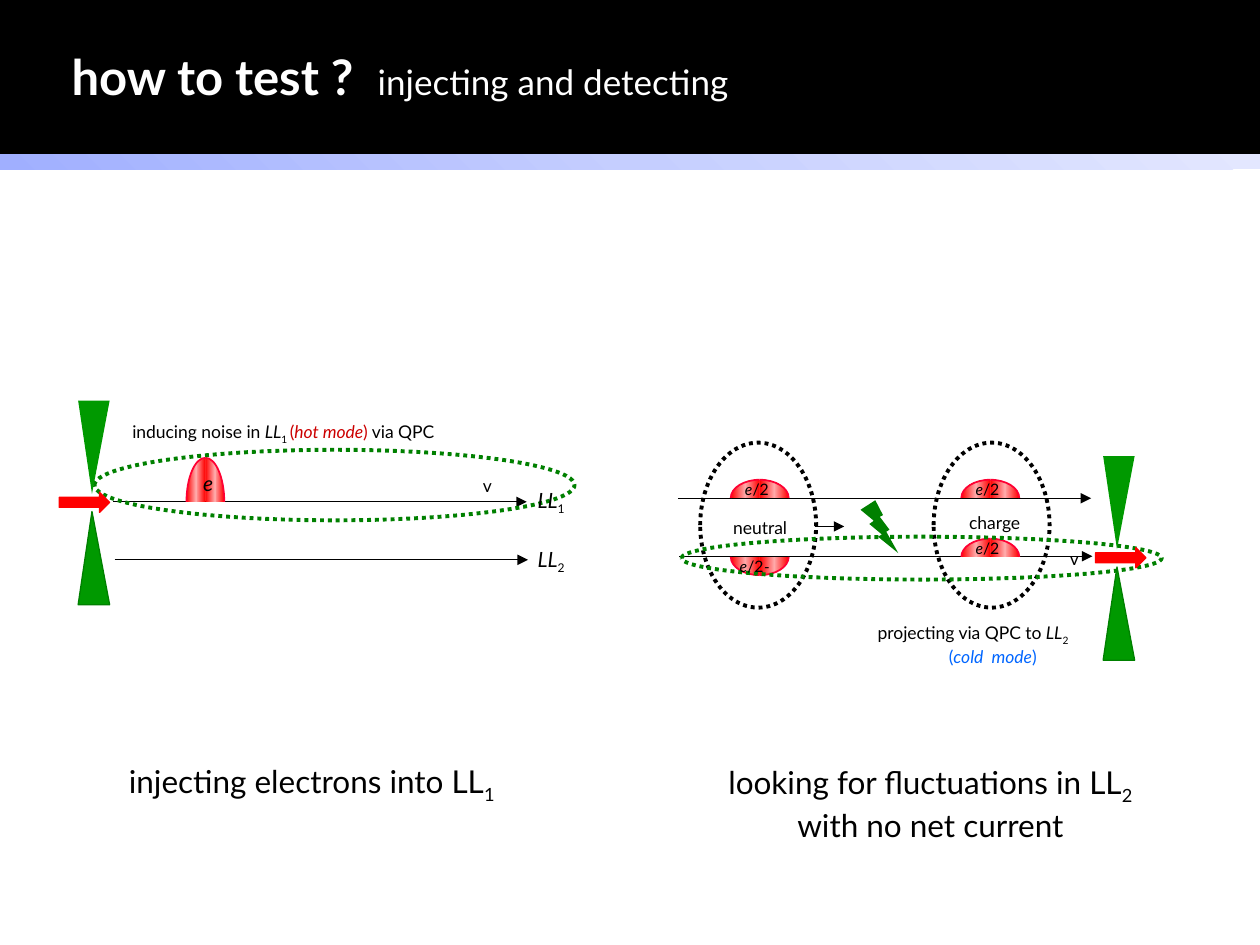
from copy import deepcopy
from dataclasses import dataclass
from typing import NamedTuple

from lxml.etree import SubElement
from pptx import Presentation
from pptx.dml.color import RGBColor
from pptx.enum.dml import MSO_LINE
from pptx.enum.shapes import MSO_CONNECTOR, MSO_SHAPE as Kind
from pptx.enum.text import MSO_ANCHOR, MSO_AUTO_SIZE as Fit, PP_ALIGN as Align
from pptx.oxml.ns import qn
from pptx.util import Inches, Pt

deck = Presentation()
deck.slide_width, deck.slide_height = Inches(10), Inches(7.5)
slide = deck.slides.add_slide(deck.slide_layouts[6])
shapes = slide.shapes
COL, ROW = deck.slide_width / 100, deck.slide_height / 75


class Box(NamedTuple):
    x: float
    y: float
    w: float
    h: float


class Run(NamedTuple):
    text: str
    ital: bool = False
    sub: bool = False
    ink: str = "000000"
    size: float = 0
    bold: bool = False
    gap: int = 0


@dataclass
class Label:
    box: Box
    size: float
    lines: list[list[Run]]
    align: Align = Align.LEFT
    wrap: bool = False
    rtl: bool = False
    dent: float = 0


class Wire(NamedTuple):
    x: float
    y: float
    end: float


class Ring(NamedTuple):
    box: Box
    ink: str
    text: str = ""


def rgb(ink: str) -> RGBColor:
    """Turn a hex string into a colour."""
    return RGBColor.from_string(ink)


def place(box: Box) -> list[int]:
    """Turn grid cells into slide lengths."""
    return [round(n * u) for n, u in zip(box, (COL, ROW, COL, ROW))]


def paint(shape, fill: str = "", line: str = "", width: float = 0.75) -> None:
    """Set the fill and line of a shape; an empty colour means none."""
    shape.shadow.inherit = False
    if fill:
        shape.fill.solid()
        shape.fill.fore_color.rgb = rgb(fill)
    else:
        shape.fill.background()
    if line:
        shape.line.color.rgb = rgb(line)
        shape.line.width = Pt(width)
    else:
        shape.line.fill.background()


def blend(shape, inks: list[str], focus: bool = False) -> None:
    """Fill a shape with evenly spaced colours, sideways or from a corner."""
    shape.fill.gradient()
    grad = shape.element.spPr.find(qn("a:gradFill"))
    for child in list(grad):
        grad.remove(child)
    stops = SubElement(grad, qn("a:gsLst"))
    for i, ink in enumerate(inks):
        stop = SubElement(stops, qn("a:gs"), pos=str(100000 * i // (len(inks) - 1)))
        SubElement(stop, qn("a:srgbClr"), val=ink)
    if focus:
        ring = SubElement(grad, qn("a:path"), path="circle")
        SubElement(ring, qn("a:fillToRect"), t="100000", r="100000")
    else:
        SubElement(grad, qn("a:lin"), ang="0", scaled="1")


def solid(kind: Kind, box: Box, fill: str = "", line: str = "", width: float = 0.75):
    """Add a preset shape."""
    shape = shapes.add_shape(kind, *place(box))
    paint(shape, fill, line, width)
    return shape


def outline(points: list[tuple[float, float]]):
    """Add a closed outline through grid points."""
    spots = [(round(x * COL), round(y * ROW)) for x, y in points]
    pen = shapes.build_freeform(*spots[0])
    pen.add_line_segments(spots[1:])
    return pen.convert_to_shape()


def write(para, runs: list[Run], size: float, align: Align, rtl: bool) -> None:
    """Fill one paragraph run by run."""
    para.alignment = align
    if rtl:
        para._p.get_or_add_pPr().set("rtl", "1")
    for item in runs:
        run = para.add_run()
        run.text = item.text
        font = run.font
        font.name, font.size = "Lato", Pt(item.size or size)
        font.italic, font.bold = item.ital, item.bold
        font.color.rgb = rgb(item.ink)
        props = run._r.get_or_add_rPr()
        if item.sub:
            props.set("baseline", "-25000")
        if item.gap:
            props.set("spc", str(item.gap))


def note(label: Label) -> None:
    """Add a text box."""
    frame = shapes.add_textbox(*place(label.box)).text_frame
    frame.word_wrap, frame.auto_size = label.wrap, Fit.SHAPE_TO_FIT_TEXT
    for i, runs in enumerate(label.lines):
        para = frame.add_paragraph() if i else frame.paragraphs[0]
        if i and label.dent:
            para._p.get_or_add_pPr().set("marL", str(round(label.dent * COL)))
        write(para, runs, label.size, label.align, label.rtl)


def wire(item: Wire) -> None:
    """Draw a level line with an arrowhead."""
    x, y, end, _ = place(Box(item.x, item.y, item.end, 0))
    line = shapes.add_connector(MSO_CONNECTOR.STRAIGHT, x, y, end, y)
    line.line.color.rgb, line.line.width = rgb("000000"), Pt(0.75)
    SubElement(line.line._get_or_add_ln(), qn("a:tailEnd"), type="triangle")
    SubElement(line.element.spPr, qn("a:effectLst"))


def curve(shape) -> None:
    """Bend the first side into a quarter ellipse and stroke that side alone."""
    body = next(shape.element.iter(qn("a:path")))
    start, side, *rest = list(body)
    (x, y), (u, v) = [(int(p[0].get("x")), int(p[0].get("y"))) for p in (start, side)]
    side.tag
    bend = SubElement(body, qn("a:cubicBezTo"))
    for a, b in ((x, y + 0.55 * (v - y)), (x + 0.45 * (u - x), v), (u, v)):
        SubElement(bend, qn("a:pt"), x=str(round(a)), y=str(round(b)))
    body.replace(side, bend)
    arc = deepcopy(body)
    for child in list(arc)[2:]:
        arc.remove(child)
    arc.set("fill", "none")
    body.set("stroke", "0")
    body.addprevious(arc)


def hump(box: Box) -> None:
    """Draw two quarter ellipses on a base; a negative height hangs them."""
    hub, crown = box.x + box.w / 2, box.y - box.h
    for foot in (box.x, box.x + box.w):
        part = outline([(foot, box.y), (hub, crown), (hub, box.y)])
        paint(part, line="FF0033", width=1)
        blend(part, ["FF0000", "FFA9A9", "FF0000"])
        curve(part)


def gate(x: float, y: float) -> None:
    """Draw two wedges whose tips face each other across a level."""
    for side, line in ((1, "008000"), (-1, "")):
        tip, base = y + 0.7 * side, y + 8.1 * side
        paint(outline([(x + 1.1, tip), (x, base), (x + 2.5, base)]), "009900", line)


def ring(item: Ring) -> None:
    """Draw a dotted ellipse, with a letter at its right if there is one."""
    shape = solid(Kind.OVAL, item.box, line=item.ink, width=2.25)
    shape.line.dash_style = MSO_LINE.ROUND_DOT
    if item.text:
        frame = shape.text_frame
        frame.word_wrap, frame.vertical_anchor = False, MSO_ANCHOR.MIDDLE
        write(frame.paragraphs[0], [Run(item.text)], 10, Align.RIGHT, True)


def tag(x: float, y: float, w: float, h: float, size: float, *runs: Run, wrap: bool = False) -> Label:
    """Describe a short right-to-left label."""
    return Label(Box(x, y, w, h), size, [list(runs)], Align.RIGHT, wrap, True)


RED, BLUE, WHITE = "CC0000", "0066FF", "FFFFFF"
LL, ONE, TWO = Run("LL", True), Run("1", sub=True), Run("2", sub=True)
HALF = Run("/2")
LEFT, RIGHT, HIGH, LOW = 58, 76.3, 39.53, 44.2

WIRES = [Wire(9, 39.83, 41.8), Wire(9.1, 44.43, 41.9), Wire(53.8, 39.55, 86.6),
         Wire(53.9, 44.15, 86.7), Wire(64.7, 41.78, 67)]
HUMPS = [Box(14.8, 39.83, 3, 3.5), Box(RIGHT, HIGH, 4.6, 1.45), Box(RIGHT, LOW, 4.6, 1.45),
         Box(LEFT, HIGH, 4.6, 1.45), Box(LEFT, LOW, 4.6, -1.45)]
RINGS = [Ring(Box(55.57, 35.13, 9.2, 13.1), "000000"), Ring(Box(74.1, 35.13, 9.2, 13.1), "000000"),
         Ring(Box(7.5, 35.7, 38.1, 5.6), "008000", "v"), Ring(Box(54.1, 42.6, 38.1, 3.4), "008000", "v")]
LABELS = [
    Label(Box(4.7, 3.2, 58.8, 5.7), 20, [[
        Run("how to test ?", ink=WHITE, size=28, bold=True),
        Run(" ", ink=WHITE, size=28, bold=True, gap=710),
        Run("injecting and detecting", ink=WHITE)]]),
    tag(41.5, 38.2, 4.3, 3, 12, LL, ONE),
    tag(41.5, 42.9, 4.3, 3, 12, LL, TWO),
    tag(15, 36.85, 2.9, 3, 12, Run("e", True)),
    Label(Box(9.52, 32.95, 27.3, 2.7), 10, [[
        Run("inducing noise in "), LL, Run("1 ", sub=True), Run("(", ink=RED),
        Run("hot mode", True, ink=RED), Run(")", ink=RED), Run(" via QPC")]]),
    *(tag(x - 0.4, y, 4.4, 2.5, 9, Run(sign, True), HALF, wrap=True)
      for x, y, sign in ((RIGHT, 37.6, "e"), (RIGHT, 42.3, "e"), (LEFT, 37.6, "e"), (LEFT, 43.7, "-e"))),
    tag(57.05, 40.55, 6.4, 2.7, 10, Run("neutral")),
    tag(75.75, 40.15, 6.2, 2.7, 10, Run("charge")),
    Label(Box(68.67, 48.9, 18.9, 4.3), 10, [
        [Run("projecting via QPC to "), LL, TWO],
        [Run("(", ink=BLUE), Run("cold", True, ink=BLUE), Run(" ", True, ink=BLUE, gap=240),
         Run("mode", True, ink=BLUE), Run(")", ink=BLUE)]], wrap=True, dent=5.65),
    Label(Box(8.75, 60, 32, 4.1), 18, [[Run("injecting electrons into LL"), ONE]], Align.CENTER),
    Label(Box(56.65, 60.05, 34.4, 7.1), 18, [
        [Run("looking for fluctuations in LL"), TWO], [Run("with no net current")]], Align.CENTER),
]

solid(Kind.RECTANGLE, Box(0, 0, 100, 12.2), "000000", "000000")
blend(solid(Kind.RECTANGLE, Box(0, 12.23, 100, 1.2)), ["A0AFFF", "C5CEFF", "E3E7FF"], True)
for item in WIRES:
    wire(item)
solid(Kind.LIGHTNING_BOLT, Box(68.3, 39.7, 3, 4.2), "008000")
for draw, items in ((hump, HUMPS), (ring, RINGS), (note, LABELS)):
    for item in items:
        draw(item)
for x, y in ((6.2, 39.9), (87.55, 44.3)):
    gate(x, y)
    solid(Kind.RIGHT_ARROW, Box(x - 1.5 if x < 50 else x - 0.6, y - 0.83, 4, 1.6), "FF0000", "FF0000")

deck.save("out.pptx")
